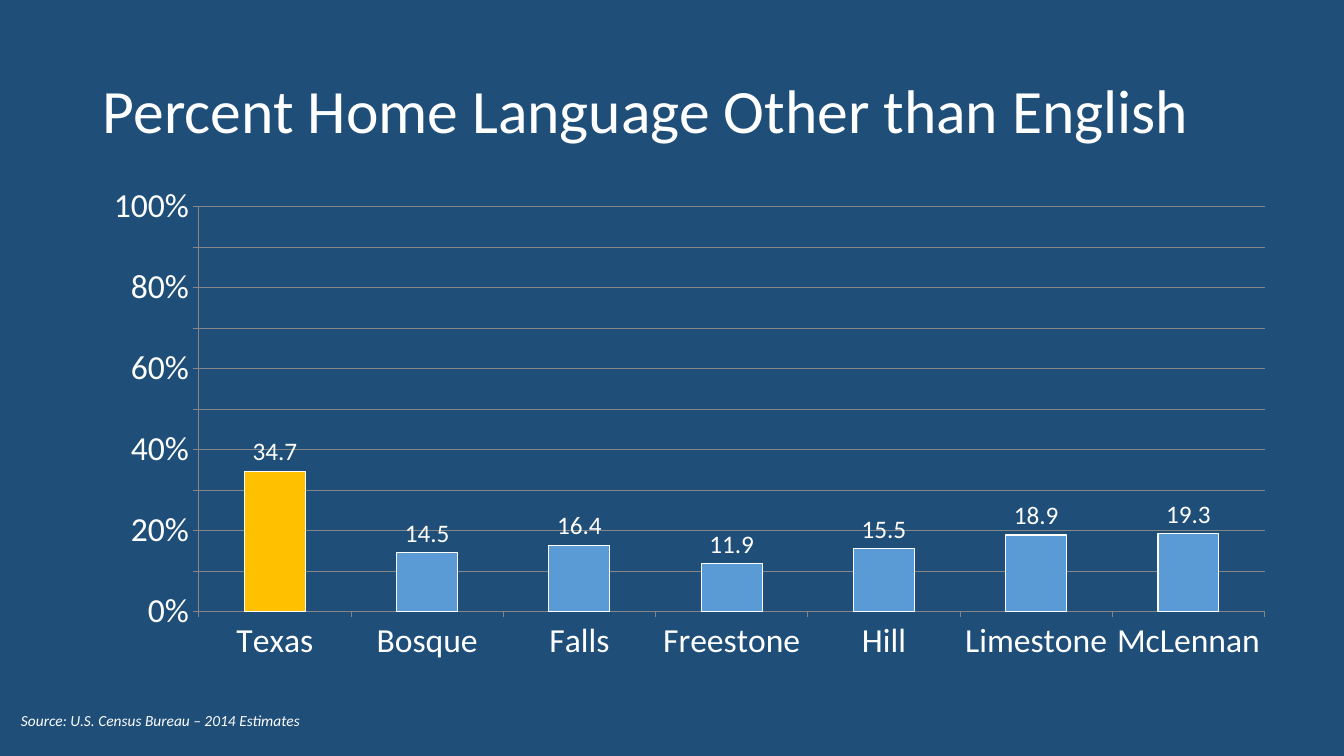
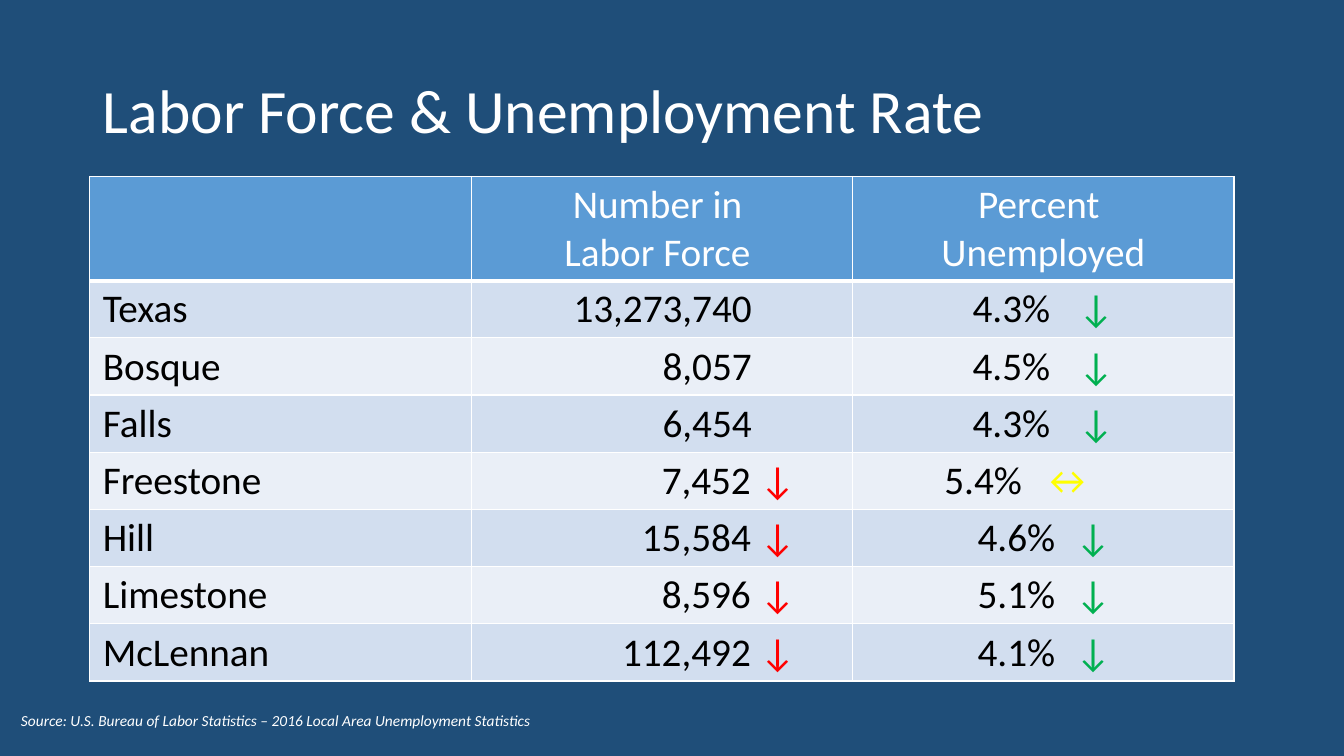
from lxml import etree
from pptx import Presentation
from pptx import util as u
from pptx.chart import data as chart_data
from pptx.dml.color import RGBColor
from pptx.enum import chart as charts, text
from pptx.oxml import ns

NAVY = RGBColor(0x1F, 0x4E, 0x79)
BLUE = RGBColor(0x5B, 0x9B, 0xD5)
GOLD = RGBColor(0xFF, 0xC0, 0x00)
WHITE = RGBColor(0xFF, 0xFF, 0xFF)
BLACK = RGBColor(0x00, 0x00, 0x00)
GREY = RGBColor(0x86, 0x86, 0x86)
GREEN = RGBColor(0x00, 0xB0, 0x50)
RED = RGBColor(0xFF, 0x00, 0x00)
YELLOW = RGBColor(0xFF, 0xFF, 0x00)
BANDS = [RGBColor(0xD2, 0xDE, 0xEF), RGBColor(0xEA, 0xEF, 0xF7)]

TITLE_FONT = {"size": u.Pt(44)}
SOURCE_FONT = {"size": u.Pt(11), "italic": True}
TABLE_FONT = {"size": u.Pt(28), "bold": False}
AXIS_FONT = {"size": u.Pt(24)}
LABEL_FONT = {"size": u.Pt(18)}


def set_font(font, values, color=WHITE):
    font.name = "Calibri"
    font.color.rgb = color
    for name, value in values.items():
        setattr(font, name, value)


def add_page(title, source, source_width):
    """Add a slide with its title and the source line at the bottom."""
    slide = presentation.slides.add_slide(title_only)
    frame = slide.shapes.title.text_frame
    frame.text = title
    frame.vertical_anchor = text.MSO_ANCHOR.MIDDLE
    frame.auto_size = text.MSO_AUTO_SIZE.NONE
    paragraph = frame.paragraphs[0]
    paragraph.alignment = text.PP_ALIGN.LEFT
    paragraph.line_spacing = 0.9
    set_font(paragraph.runs[0].font, TITLE_FONT)

    source_box = slide.shapes.add_textbox(
        u.Inches(0.11), u.Inches(7.01), u.Inches(source_width), u.Inches(0.29))
    source_box.text_frame.word_wrap = True
    source_box.text_frame.text = source
    set_font(source_box.text_frame.paragraphs[0].runs[0].font, SOURCE_FONT)
    return slide


presentation = Presentation()
presentation.slide_width = u.Inches(13.33)
presentation.slide_height = u.Inches(7.5)

background = presentation.slide_master.background.fill
background.solid()
background.fore_color.rgb = NAVY

title_only = presentation.slide_layouts[5]
title_place = {"left": 0.92, "top": 0.4, "width": 11.5, "height": 1.45}
for side, length in title_place.items():
    setattr(title_only.placeholders[0], side, u.Inches(length))

# Home language chart
slide = add_page("Percent Home Language Other than English",
                 "Source: U.S. Census Bureau – 2014 Estimates", 3.04)
home_language = {"Texas": 34.7, "Bosque": 14.5, "Falls": 16.4, "Freestone": 11.9,
                 "Hill": 15.5, "Limestone": 18.9, "McLennan": 19.3}
language_data = chart_data.CategoryChartData()
language_data.categories = list(home_language)
language_data.add_series("Series 1", list(home_language.values()))
chart = slide.shapes.add_chart(
    charts.XL_CHART_TYPE.COLUMN_CLUSTERED, u.Inches(0.89), u.Inches(1.75),
    u.Inches(11.89), u.Inches(4.92), language_data).chart
chart.has_legend = False
chart.has_title = False
set_font(chart.font, LABEL_FONT)

value_axis = chart.value_axis
value_axis.minimum_scale = 0
value_axis.maximum_scale = 100
value_axis.major_unit = 10
value_axis.has_major_gridlines = True
value_axis.tick_labels.number_format = r"0\%"
value_axis.tick_labels.number_format_is_linked = False
for axis in (chart.category_axis, value_axis):
    axis.major_tick_mark = charts.XL_TICK_MARK.OUTSIDE
    set_font(axis.tick_labels.font, AXIS_FONT)
for line in (chart.category_axis.format.line, value_axis.format.line,
             value_axis.major_gridlines.format.line):
    line.color.rgb = GREY
    line.width = u.Pt(0.75)

plot = chart.plots[0]
plot.gap_width = 150
plot.vary_by_categories = False
plot.has_data_labels = True
labels = plot.data_labels
labels.show_value = True
labels.number_format = "#,##0.0"
labels.number_format_is_linked = False
labels.position = charts.XL_LABEL_POSITION.OUTSIDE_END
set_font(labels.font, LABEL_FONT)

series = plot.series[0]
for column, color in ((series, BLUE), (series.points[0], GOLD)):
    column.format.fill.solid()
    column.format.fill.fore_color.rgb = color
    column.format.line.color.rgb = WHITE
    column.format.line.width = u.Pt(0.75)

# Labor force table
slide = add_page(
    "Labor Force & Unemployment Rate",
    "Source: U.S. Bureau of Labor Statistics – 2016 Local Area Unemployment Statistics",
    6.26)
FALLING, STEADY = ("↓", GREEN), ("↔", YELLOW)
# Name, labor force, labor force falls, rate, rate trend, rate inset, trend tab
labor_force = [
    ("Texas", "13,273,740", False, "4.3%", FALLING, 1.19, 1.05),
    ("Bosque", "8,057", False, "4.5%", FALLING, 1.19, 1.05),
    ("Falls", "6,454", False, "4.3%", FALLING, 1.19, 1.05),
    ("Freestone", "7,452", True, "5.4%", STEADY, 0.91, 0.97),
    ("Hill", "15,584", True, "4.6%", FALLING, 1.24, 0.97),
    ("Limestone", "8,596", True, "5.1%", FALLING, 1.24, 0.97),
    ("McLennan", "112,492", True, "4.1%", FALLING, 1.24, 0.97),
]
INSET = 0.13
LEFT, CENTER, RIGHT = text.PP_ALIGN.LEFT, text.PP_ALIGN.CENTER, text.PP_ALIGN.RIGHT

# Each cell: paragraphs of (text, color) runs, alignment, left and right inset, tab
header_lines = [[], ["Number in ", "Labor Force "], ["Percent ", "Unemployed"]]
rows = [[([[(line, WHITE)] for line in lines], CENTER, INSET, INSET, None)
         for lines in header_lines]]
for name, number, falls, rate, (arrow, arrow_color), rate_inset, trend_tab in labor_force:
    number_runs = [(number, BLACK)]
    if falls:
        number_runs = [(number + " ", BLACK), ("↓", RED)]
    rate_runs = [(rate + "\t", BLACK), (arrow, arrow_color)]
    rows.append([
        ([[(name, BLACK)]], LEFT, INSET, INSET, None),
        ([number_runs], RIGHT, INSET, 0.57 if falls else 1, None),
        ([rate_runs], LEFT, rate_inset, INSET, trend_tab),
    ])

table = slide.shapes.add_table(
    len(rows), 3, u.Inches(0.89), u.Inches(1.75), u.Inches(11.35), u.Inches(4.71)).table
for row_index, row in enumerate(rows):
    table.rows[row_index].height = u.Inches(0.53 if row_index else 1)
    for column_index, (lines, alignment, left, right, tab) in enumerate(row):
        cell = table.cell(row_index, column_index)
        cell.margin_left, cell.margin_right = u.Inches(left), u.Inches(right)
        cell.fill.solid()
        cell.fill.fore_color.rgb = BANDS[(row_index - 1) % 2] if row_index else BLUE

        properties = cell._tc.get_or_add_tcPr()
        for position, side in enumerate(("lnL", "lnR", "lnT", "lnB")):
            points = 3 if row_index == 0 and side == "lnB" else 1
            border = etree.Element(ns.qn("a:" + side), w=str(u.Pt(points)))
            border_fill = etree.SubElement(border, ns.qn("a:solidFill"))
            etree.SubElement(border_fill, ns.qn("a:srgbClr"), val=str(WHITE))
            properties.insert(position, border)

        for line_index, runs in enumerate(lines):
            frame = cell.text_frame
            paragraph = frame.add_paragraph() if line_index else frame.paragraphs[0]
            paragraph.alignment = alignment
            if tab:
                tab_list = etree.SubElement(
                    paragraph._p.get_or_add_pPr(), ns.qn("a:tabLst"))
                etree.SubElement(
                    tab_list, ns.qn("a:tab"), pos=str(u.Inches(tab)), algn="l")
            for content, color in runs:
                run = paragraph.add_run()
                run.text = content
                set_font(run.font, TABLE_FONT, color)

presentation.save("out.pptx")
